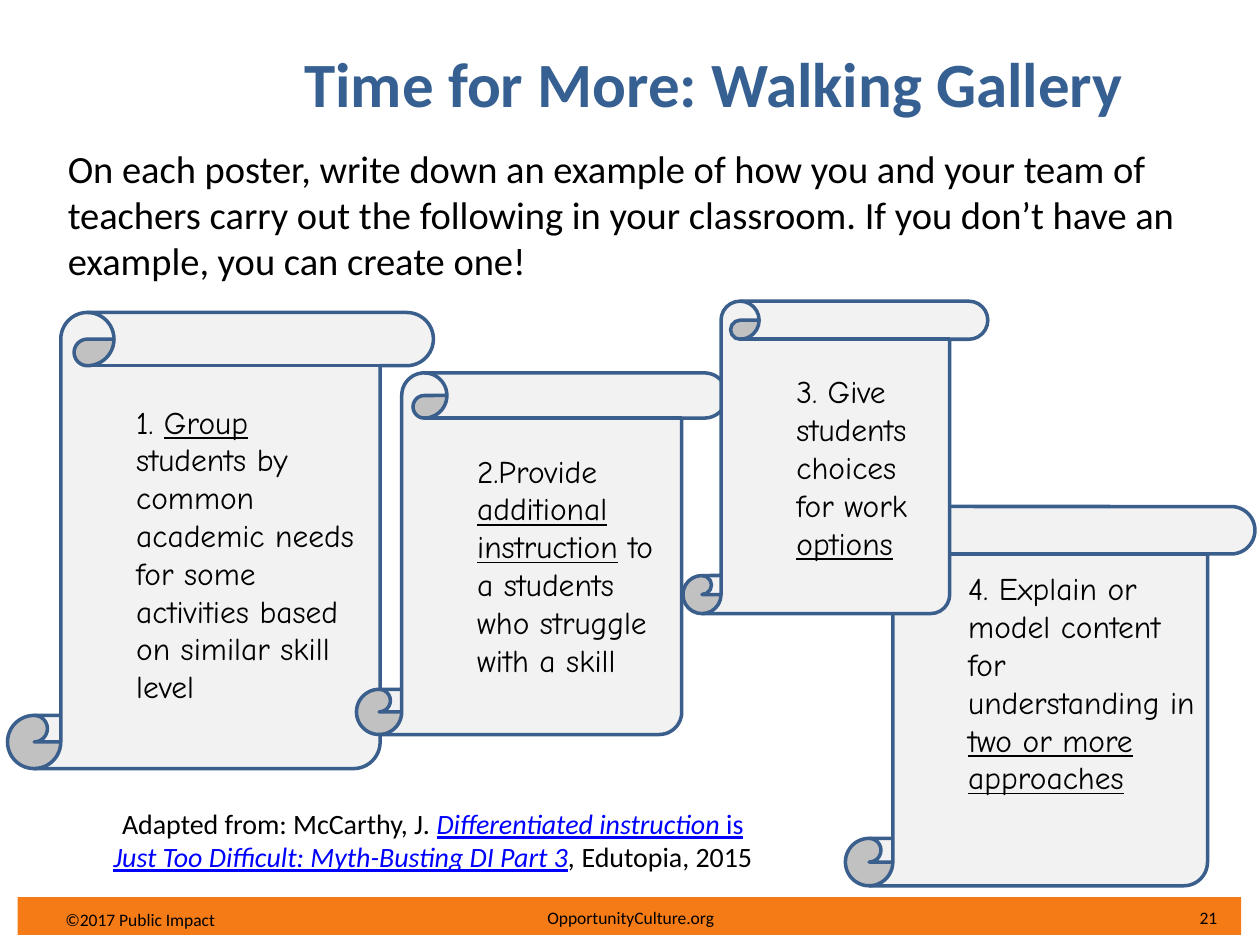
import pptx
import pptx.util
import pptx.dml.color
import pptx.enum.shapes
import pptx.enum.text

Inches = pptx.util.Inches
ALIGN = pptx.enum.text.PP_ALIGN
ANCHOR = pptx.enum.text.MSO_ANCHOR
SHAPE = pptx.enum.shapes.MSO_SHAPE

SMALL = {"name": "Calibri", "size": pptx.util.Pt(10), "color": "000000"}
TITLE = {"name": "Calibri", "size": pptx.util.Pt(36), "color": "376092", "bold": True}
BODY = {"name": "Calibri", "size": pptx.util.Pt(22), "color": "000000"}
SOURCE = {"name": "Calibri", "size": pptx.util.Pt(16), "color": "000000"}
POSTER = {"name": "Comic Neue", "size": pptx.util.Pt(18), "color": "000000"}
UNDERLINED = {"underline": True}
LINK = {"color": "0000FF", "underline": True}
LINK_ITALIC = {**LINK, "italic": True}

POSTERS = [
    ((0.06, 2.48, 3.38, 3.62), 0.05, [
        ("1. ", {}), ("Group", UNDERLINED),
        (" students by common academic needs for some activities based on similar skill level", {})]),
    ((2.83, 2.96, 2.94, 2.87), 0.05, [
        ("2.Provide ", {}), ("additional instruction", UNDERLINED),
        (" to a students who struggle with a skill", {})]),
    ((6.71, 4.02, 3.25, 3.01), 0.45, [
        ("4. Explain or model content for understanding in ", {}),
        ("two or more approaches", UNDERLINED)]),
    ((5.42, 2.39, 2.42, 2.48), 0.05, [
        ("3. Give students choices for work ", {}), ("options", UNDERLINED)]),
]


def color(value):
    """Turn a hex string into a colour."""
    return pptx.dml.color.RGBColor.from_string(value)


def write(frame, spans, style, align=ALIGN.LEFT, anchor=ANCHOR.TOP):
    """Fill a text frame with one paragraph of formatted spans."""
    frame.word_wrap = True
    frame.vertical_anchor = anchor
    para = frame.paragraphs[0]
    para.alignment = align
    for text, changes in spans:
        span = para.add_run()
        span.text = text
        for key, value in {**style, **changes}.items():
            if key == "color":
                span.font.color.rgb = color(value)
            else:
                setattr(span.font, key, value)
    return para


def add_text(page, box, spans, style, **layout):
    """Place a text box."""
    frame = page.shapes.add_textbox(*map(Inches, box)).text_frame
    return write(frame, spans, style, **layout)


def add_filled(page, kind, box, fill):
    """Place a flat shape without an outline."""
    shape = page.shapes.add_shape(kind, *map(Inches, box))
    shape.shadow.inherit = False
    shape.fill.solid()
    shape.fill.fore_color.rgb = color(fill)
    shape.line.fill.background()
    return shape


def add_footer(page, box):
    """Draw the footer band with its three labels."""
    left, top, width, height = box
    add_filled(page, SHAPE.RECTANGLE, box, "F57B17")
    labels = [
        ("OpportunityCulture.org", 3.28, -0.04, 3.17, ALIGN.CENTER),
        ("21", width - 0.52, -0.04, 0.52, ALIGN.CENTER),
        ("©2017 Public Impact", 0.28, -0.02, 2.42, ALIGN.LEFT),
    ]
    for text, across, down, label_width, align in labels:
        add_text(page, (left + across, top + down, label_width, height + 0.1),
                 [(text, {})], SMALL, align=align, anchor=ANCHOR.MIDDLE)


def add_heading(page, box):
    """Write the title and the task below it."""
    left, top, width, height = box
    add_text(page, (left + 0.89, top, 8.67, 0.62),
             [("Time for More: Walking Gallery", {})], TITLE, align=ALIGN.CENTER)
    add_text(page, (left, top + 0.8, width, height - 0.8), [
        ("On each poster, write down an example of how you and your team of teachers carry out "
         "the following in your classroom. If you don’t have an example, you can create one!", {})],
        BODY)


def add_poster(page, box, bottom, spans):
    """Draw one scroll with its indented text."""
    scroll = add_filled(page, SHAPE.VERTICAL_SCROLL, box, "F2F2F2")
    scroll.line.color.rgb = color("3A5F8C")
    scroll.line.width = pptx.util.Pt(2)
    scroll.text_frame.margin_bottom = Inches(bottom)
    para = write(scroll.text_frame, spans, POSTER, anchor=ANCHOR.MIDDLE)
    properties = para._p.get_or_add_pPr()
    properties.set("marL", str(Inches(0.5)))
    properties.set("indent", "0")


def add_source(page, box):
    """Write the citation."""
    add_text(page, box, [
        ("Adapted from: McCarthy, J. ", {}),
        ("Differentiated instruction", LINK_ITALIC),
        (" is", LINK),
        (" Just Too Difficult: Myth-Busting DI Part 3", LINK_ITALIC),
        (", ", {"italic": True}),
        ("Edutopia, 2015", {})], SOURCE, align=ALIGN.CENTER)


def main():
    """Build and save the deck."""
    deck = pptx.Presentation()
    deck.slide_width, deck.slide_height = Inches(10), Inches(7.5)
    page = deck.slides.add_slide(deck.slide_layouts[6])
    add_footer(page, (0.14, 7.12, 9.71, 0.3))
    add_heading(page, (0.44, 0.3, 9.17, 2))
    for box, bottom, spans in POSTERS:
        add_poster(page, box, bottom, spans)
    add_source(page, (0.76, 6.35, 5.35, 0.64))
    deck.save("out.pptx")


if __name__ == "__main__":
    main()
